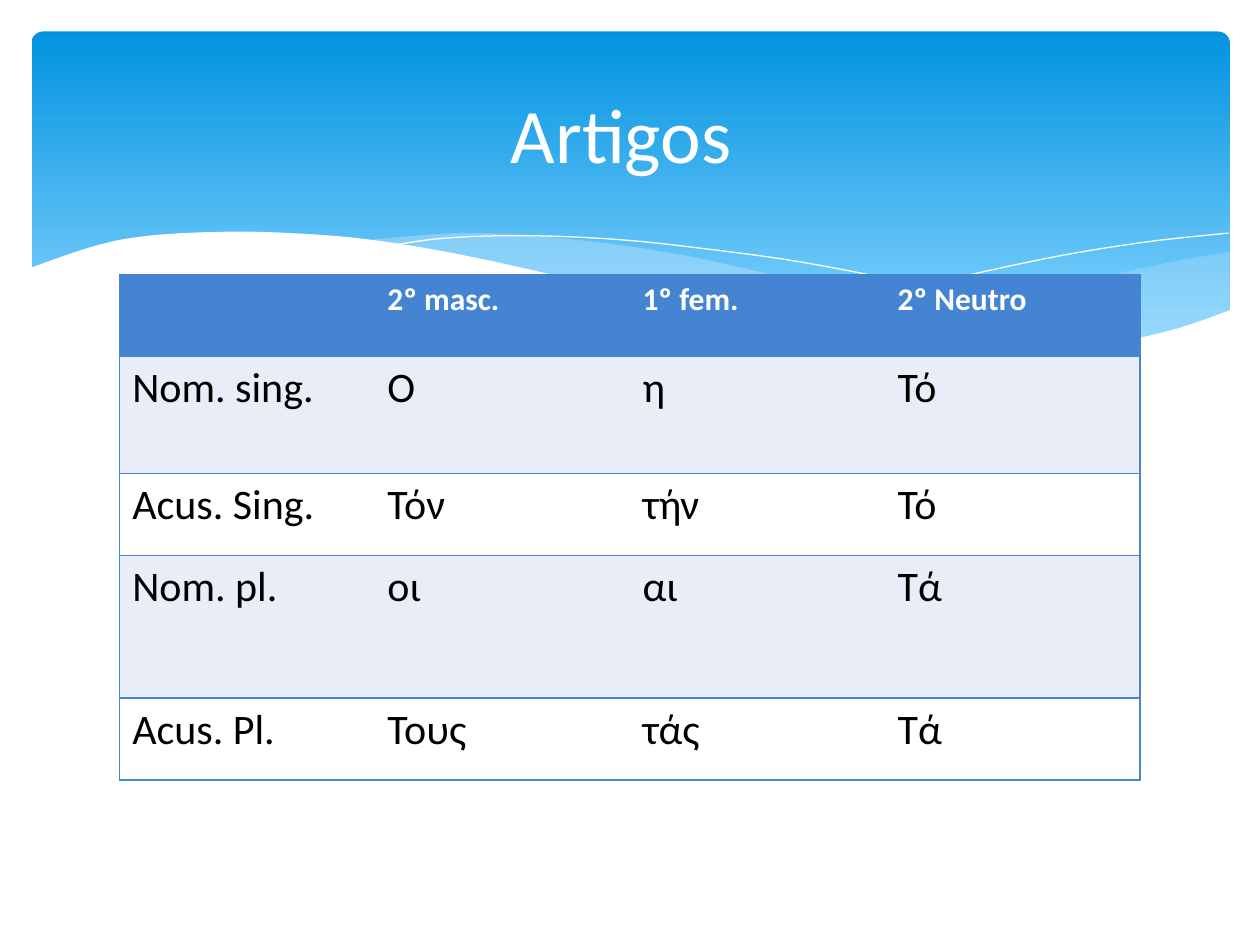
"""Build the slide of Greek articles: a wave banner, a title and a table."""
import dataclasses
import typing

import lxml.etree
import pptx
import pptx.dml.color
import pptx.enum.dml
import pptx.enum.shapes
import pptx.enum.text
import pptx.oxml.ns
import pptx.util

RGB = pptx.dml.color.RGBColor
Inches = pptx.util.Inches
Pt = pptx.util.Pt
qn = pptx.oxml.ns.qn
Point = typing.Tuple[float, float]

WHITE = RGB(0xFF, 0xFF, 0xFF)
BLACK = RGB(0, 0, 0)
DEEP = RGB(0x02, 0x93, 0xE0)
SKY = RGB(0x83, 0xD3, 0xFE)
MIST = RGB(0xC6, 0xE7, 0xFC)
BLUE = RGB(0x45, 0x84, 0xD3)
PALE = RGB(0xE9, 0xED, 0xF7)
FONT = "Calibri"
NO_GRID = "{2D5ABB26-0587-4C30-8999-92F81FD0307C}"
STEPS = 6


@dataclasses.dataclass
class Wave:
    """Smooth curves joined end to end, filled or drawn as a line."""
    curves: typing.List[typing.List[Point]]
    fill: typing.Optional[RGB] = None
    alpha: int = 100


WAVES = [
    Wave([[(9.76, 2), (9.35, 2.07), (8.61, 2.23), (7.53, 2.48), (6.61, 2.65)],
          [(6.61, 2.65), (7.19, 2.72), (7.69, 2.77), (8.14, 2.78), (8.63, 2.75),
           (9.05, 2.69), (9.42, 2.59), (9.76, 2.47)]], MIST, 29),
    Wave([[(8.93, 2.73), (8.07, 2.6), (7.06, 2.4), (6.29, 2.22), (5.55, 2.05),
           (4.89, 1.94), (4.2, 1.87), (3.61, 1.85), (2.86, 1.91)],
          [(2.86, 1.91), (3.62, 2.03), (4.49, 2.22), (5.3, 2.4), (6.18, 2.58),
           (6.95, 2.7), (7.61, 2.77), (8.18, 2.78), (8.93, 2.73)]], MIST, 40),
    Wave([[(3.09, 1.95), (3.53, 1.89), (4.16, 1.87), (4.89, 1.9), (5.56, 1.97),
           (6.36, 2.08), (7.27, 2.26), (8.31, 2.51), (9.07, 2.72)]]),
    Wave([[(6.13, 2.57), (6.72, 2.41), (7.48, 2.23), (8.36, 2.04), (9.1, 1.92),
           (9.75, 1.85)]]),
    Wave([[(9.77, 2.46), (9.3, 2.62), (8.75, 2.73), (8.09, 2.77), (7.26, 2.72),
           (6.48, 2.62), (5.55, 2.45), (4.47, 2.2), (3.65, 2.02), (2.92, 1.9),
           (2.3, 1.85), (1.77, 1.84), (1.19, 1.87), (0.76, 1.95), (0.23, 2.13)],
          [(0.23, 3.29), (9.77, 3.29)]], WHITE),
]

HEADS = ["", "2º masc.", "1º fem.", "2º Neutro"]
ROWS = [
    ["Nom. sing.", "Ο", "η", "Τό"],
    ["Acus. Sing.", "Τόν", "τήν", "Τό"],
    ["Nom. pl.", "οι", "αι", "Τά"],
    ["Acus. Pl.", "Τους", "τάς", "Τά"],
]
HIGHS = [0.65, 0.93, 0.65, 1.13, 0.65]


def put(frame, text: str, size: int = 24, color: RGB = BLACK,
        bold: bool = False, align=pptx.enum.text.PP_ALIGN.LEFT) -> None:
    """Write one formatted paragraph into a text frame."""
    para = frame.paragraphs[0]
    para.alignment = align
    run = para.add_run()
    run.text = text
    run.font.name, run.font.size = FONT, Pt(size)
    run.font.bold, run.font.color.rgb = bold, color


def smooth(keys: typing.List[Point]) -> typing.List[Point]:
    """Return points on a Catmull-Rom curve through the keys."""
    ends = [keys[0], *keys, keys[-1]]
    spots = [keys[0]]
    for a, b, c, d in zip(ends, ends[1:], ends[2:], ends[3:]):
        for step in range(1, STEPS + 1):
            t = step / STEPS
            spots.append(tuple(
                q + t / 2 * (r - p + t * (2 * p - 5 * q + 4 * r - s
                                          + t * (3 * (q - r) + s - p)))
                for p, q, r, s in zip(a, b, c, d)))
    return spots


def draw_wave(shapes, wave: Wave) -> None:
    """Draw one wave as a freeform."""
    spots = [(Inches(x), Inches(y))
             for keys in wave.curves for x, y in smooth(keys)]
    pen = shapes.build_freeform(*spots[0])
    pen.add_line_segments(spots[1:], close=wave.fill is not None)
    shape = pen.convert_to_shape()
    shape.shadow.inherit = False
    if wave.fill is None:
        shape.fill.background()
        shape.line.color.rgb = WHITE
        shape.line.width = Pt(0)
        return
    shape.line.fill.background()
    shape.fill.solid()
    shape.fill.fore_color.rgb = wave.fill
    if wave.alpha < 100:
        tint = shape.fill._xPr.find(qn("a:solidFill"))[0]
        lxml.etree.SubElement(tint, qn("a:alpha"), val=str(wave.alpha * 1000))


def draw_banner(shapes) -> None:
    """Draw the rounded gradient banner."""
    shape = shapes.add_shape(pptx.enum.shapes.MSO_SHAPE.ROUNDED_RECTANGLE,
                             Inches(0.25), Inches(0.25), Inches(9.51), Inches(2.7))
    shape.adjustments[0] = 0.034
    shape.shadow.inherit = False
    shape.line.fill.background()
    shape.fill.gradient()
    shape.fill.gradient_angle = 270
    for stop, color, place in zip(shape.fill.gradient_stops, (DEEP, SKY), (0, 0.9)):
        stop.color.rgb = color
        stop.position = place


def edge(cell, sides: str) -> None:
    """Give a cell blue borders on the named sides."""
    props = cell._tc.get_or_add_tcPr()
    for spot, side in enumerate(sides):
        line = lxml.etree.Element(qn("a:ln" + side), w=str(Pt(1)))
        fill = lxml.etree.SubElement(line, qn("a:solidFill"))
        lxml.etree.SubElement(fill, qn("a:srgbClr"), val=str(BLUE))
        props.insert(spot, line)


def draw_table(shapes) -> None:
    """Draw the table of articles."""
    table = shapes.add_table(len(HIGHS), len(HEADS), Inches(0.95), Inches(2.18),
                             Inches(8.1), Inches(sum(HIGHS))).table
    table._tbl.tblPr.find(qn("a:tableStyleId")).text = NO_GRID
    for i, (high, words) in enumerate(zip(HIGHS, [HEADS, *ROWS])):
        table.rows[i].height = Inches(high)
        for j, word in enumerate(words):
            cell = table.cell(i, j)
            cell.fill.solid()
            cell.fill.fore_color.rgb = BLUE if i == 0 else PALE if i % 2 else WHITE
            edge(cell, {0: "LTB", len(HEADS) - 1: "RTB"}.get(j, "TB"))
            if word and i == 0:
                put(cell.text_frame, word, size=18, color=WHITE, bold=True)
            elif word:
                put(cell.text_frame, word)


def main() -> None:
    """Build and save the deck."""
    deck = pptx.Presentation()
    deck.slide_width, deck.slide_height = Inches(10), Inches(7.5)
    shapes = deck.slides.add_slide(deck.slide_layouts[5]).shapes
    draw_banner(shapes)
    for wave in WAVES:
        draw_wave(shapes, wave)
    draw_table(shapes)
    title = shapes.title
    title.left, title.top = Inches(0.5), Inches(0.37)
    title.width, title.height = Inches(9), Inches(1.37)
    title.text_frame.vertical_anchor = pptx.enum.text.MSO_ANCHOR.MIDDLE
    put(title.text_frame, "Artigos ", size=44, color=WHITE,
        align=pptx.enum.text.PP_ALIGN.CENTER)
    shapes._spTree.append(title._element)
    deck.save("out.pptx")


if __name__ == "__main__":
    main()
